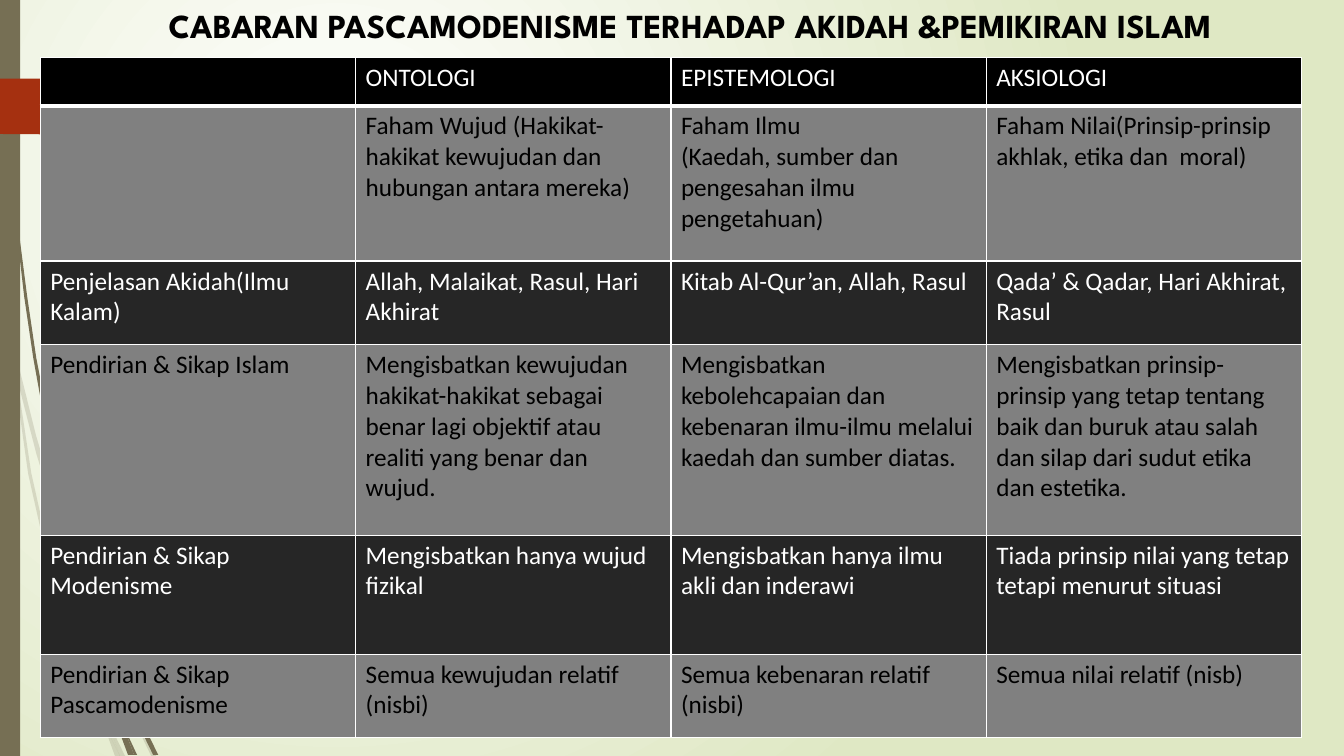
from lxml.etree import SubElement as Sub
from pptx import Presentation
from pptx.dml.color import RGBColor
from pptx.enum.shapes import MSO_SHAPE as Form
from pptx.enum.text import MSO_AUTO_SIZE as Fit, PP_ALIGN as Align
from pptx.oxml import parse_xml
from pptx.oxml.ns import nsdecls, qn
from pptx.util import Inches, Pt

BLACK = RGBColor(0x00, 0x00, 0x00)
WHITE = RGBColor(0xFF, 0xFF, 0xFF)
GRAY = RGBColor(0x80, 0x80, 0x80)
DARK = RGBColor(0x26, 0x26, 0x26)
OLIVE = RGBColor(0x76, 0x6F, 0x54)
RUST = RGBColor(0xA5, 0x30, 0x10)
PALE = RGBColor(0xDF, 0xE8, 0xC4)

TITLE = "CABARAN PASCAMODENISME TERHADAP AKIDAH &PEMIKIRAN ISLAM"
ROWS = [
    (0.48, BLACK, WHITE, ["", "ONTOLOGI", "EPISTEMOLOGI", "AKSIOLOGI"]),
    (1.54, GRAY, BLACK, [
        "",
        "Faham Wujud (Hakikat-hakikat kewujudan dan hubungan antara mereka)",
        "Faham Ilmu\n(Kaedah, sumber dan pengesahan ilmu pengetahuan)",
        "Faham Nilai(Prinsip-prinsip akhlak, etika dan  moral)"]),
    (0.83, DARK, WHITE, [
        "Penjelasan Akidah(Ilmu Kalam)",
        "Allah, Malaikat, Rasul, Hari Akhirat",
        "Kitab Al-Qur’an, Allah, Rasul",
        "Qada’ & Qadar, Hari Akhirat, Rasul"]),
    (1.89, GRAY, BLACK, [
        "Pendirian & Sikap Islam",
        "Mengisbatkan kewujudan hakikat-hakikat sebagai benar lagi objektif "
        "atau realiti yang benar dan wujud.",
        "Mengisbatkan kebolehcapaian dan kebenaran ilmu-ilmu melalui kaedah "
        "dan sumber diatas.",
        "Mengisbatkan prinsip-prinsip yang tetap tentang baik dan buruk atau "
        "salah dan silap dari sudut etika dan estetika."]),
    (1.18, DARK, WHITE, [
        "Pendirian & Sikap Modenisme",
        "Mengisbatkan hanya wujud fizikal",
        "Mengisbatkan hanya ilmu akli dan inderawi",
        "Tiada prinsip nilai yang tetap tetapi menurut situasi"]),
    (0.83, GRAY, BLACK, [
        "Pendirian & Sikap Pascamodenisme",
        "Semua kewujudan relatif (nisbi)",
        "Semua kebenaran relatif (nisbi)",
        "Semua nilai relatif (nisb)"]),
]

FAINT = [
    [(0.58, 5.22), (0.84, 5.99), (0.85, 5.86), (0.62, 5.2), (0.36, 4.33),
     (0.14, 3.45), (0.17, 3.76), (0.36, 4.5)],
    [(0.93, 6.83), (0.7, 6.19), (0.48, 5.45), (0.31, 4.69), (0.17, 3.76),
     (0.11, 3.5), (0.28, 4.7), (0.45, 5.46), (0.65, 6.21), (0.92, 6.93),
     (1.01, 7.14)],
    [(0.92, 6.07), (0.88, 5.96), (0.88, 6.1), (1.23, 6.94), (1.5, 7.5),
     (1.55, 7.5), (1.27, 6.92)],
    [(1.19, 7.5), (1.24, 7.5), (1.05, 7.11)],
    [(1.01, 7.14), (1.14, 7.5), (1.19, 7.5)],
    [(0.96, 6.92), (0.93, 6.83), (1.01, 7.14), (1.19, 7.5), (1.05, 7.11)],
]
SOLID = [
    [(0.07, 1.1), (0.17, 2.33), (0.24, 2.94), (0.33, 3.55), (0.44, 4.16),
     (0.57, 4.81), (0.55, 4.53), (0.36, 3.55), (0.27, 2.94), (0.19, 2.32),
     (0.08, 1.09), (0.04, 0), (0.03, 0), (0.04, 0.48)],
    [(1.13, 6.49), (1.1, 6.41), (1.11, 6.56), (1.32, 7.08), (1.52, 7.49),
     (1.57, 7.49), (1.36, 7.06)],
    [(1.33, 7.49), (1.36, 7.49), (1.22, 7.19)],
    [(1.17, 7.22), (1.27, 7.49), (1.31, 7.49)],
    [(1.16, 7.06), (1.1, 6.91), (1.17, 7.22), (1.3, 7.49), (1.33, 7.49),
     (1.22, 7.19)],
]
ARROW = [(1.74, 1.06), (1.48, 1.33), (1.46, 1.34), (0, 1.33), (0, 0.78),
         (1.46, 0.78), (1.48, 0.79)]


class Deck:
    """Hold the style and the current slide."""

    def __init__(self):
        self.show = Presentation()
        self.show.slide_width = Inches(13.33)
        self.show.slide_height = Inches(7.5)
        self.slide = self.show.slides.add_slide(self.show.slide_layouts[6])
        self.shapes = self.slide.shapes

    def glow(self, inner, outer):
        back = parse_xml(
            f'<p:bg {nsdecls("p", "a")}><p:bgPr><a:gradFill><a:gsLst>'
            f'<a:gs pos="0"><a:srgbClr val="{inner}"/></a:gs>'
            f'<a:gs pos="100000"><a:srgbClr val="{outer}"/></a:gs></a:gsLst>'
            '<a:path path="circle"><a:fillToRect l="50000" t="50000" '
            'r="100000" b="100000"/></a:path></a:gradFill><a:effectLst/>'
            '</p:bgPr></p:bg>')
        self.slide.element.cSld.insert(0, back)

    def paint(self, shape, color):
        shape.shadow.inherit = False
        shape.fill.solid()
        shape.fill.fore_color.rgb = color
        shape.line.fill.background()

    def bar(self, left, top, width, height, color):
        box = map(Inches, (left, top, width, height))
        self.paint(self.shapes.add_shape(Form.RECTANGLE, *box), color)

    def free(self, points, color, alpha=100):
        first, *rest = [(Inches(x), Inches(y)) for x, y in points]
        pen = self.shapes.build_freeform(*first)
        pen.add_line_segments(rest, close=True)
        shape = pen.convert_to_shape()
        self.paint(shape, color)
        if alpha < 100:
            tint = shape.element.spPr.find(".//" + qn("a:srgbClr"))
            Sub(tint, qn("a:alpha")).set("val", str(alpha * 1000))

    def add_run(self, para, text, size, font, color, bold=False):
        run = para.add_run()
        run.text = text
        run.font.size = Pt(size)
        run.font.name = font
        run.font.bold = bold
        run.font.color.rgb = color

    def title(self, text, left, top, width, height):
        box = map(Inches, (left, top, width, height))
        frame = self.shapes.add_textbox(*box).text_frame
        frame.word_wrap = True
        frame.auto_size = Fit.SHAPE_TO_FIT_TEXT
        para = frame.paragraphs[0]
        para.alignment = Align.CENTER
        self.add_run(para, text, 24, "League Spartan", BLACK, True)

    def edge(self, cell, side, width):
        line = Sub(cell._tc.get_or_add_tcPr(), qn("a:ln" + side))
        line.set("w", str(Pt(width)))
        fill = Sub(line, qn("a:solidFill"))
        Sub(fill, qn("a:srgbClr")).set("val", str(WHITE))

    def cell(self, cell, text, fill, color, base):
        for side, width in zip("LRTB", (1, 1, 1, base)):
            self.edge(cell, side, width)
        cell.fill.solid()
        cell.fill.fore_color.rgb = fill
        frame = cell.text_frame
        for i, part in enumerate(text.split("\n") if text else []):
            para = frame.add_paragraph() if i else frame.paragraphs[0]
            self.add_run(para, part, 18, "Calibri", color)

    def table(self, rows, left, top, width):
        high = sum(row[0] for row in rows)
        count = len(rows[0][3])
        box = map(Inches, (left, top, width, high))
        grid = self.shapes.add_table(len(rows), count, *box).table
        grid.first_row = grid.horz_banding = False
        for r, (tall, fill, color, texts) in enumerate(rows):
            grid.rows[r].height = Inches(tall)
            for c, text in enumerate(texts):
                self.cell(grid.cell(r, c), text, fill, color, 1 if r else 3)


def main():
    deck = Deck()
    deck.glow(WHITE, PALE)
    for points in FAINT:
        deck.free(points, OLIVE, 20)
    for points in SOLID:
        deck.free(points, OLIVE)
    deck.bar(0, 0, 0.2, 7.5, OLIVE)
    deck.free(ARROW, RUST)
    deck.title(TITLE, 0.78, 0, 12.13, 0.5)
    deck.table(ROWS, 0.4, 0.57, 12.51)
    deck.show.save("out.pptx")


if __name__ == "__main__":
    main()
